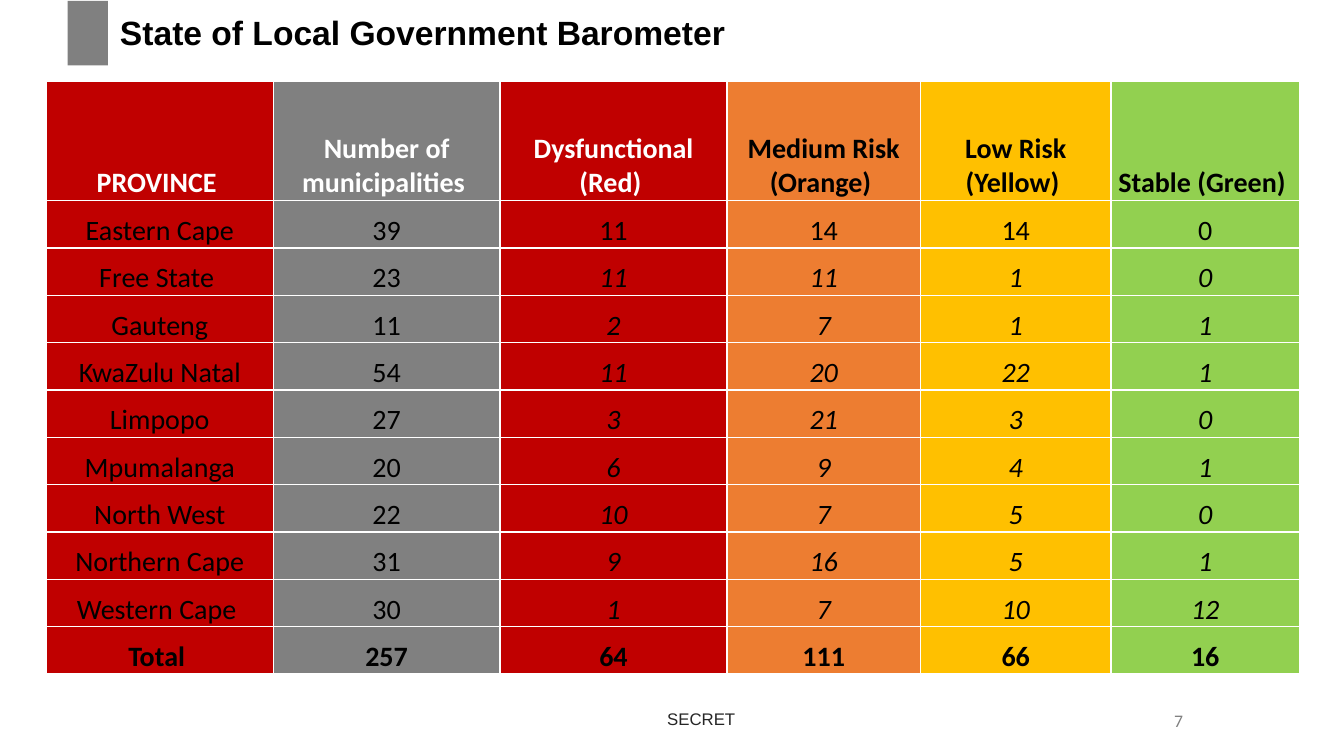
from dataclasses import dataclass
from lxml.etree import SubElement
from pptx import Presentation
from pptx.dml.color import RGBColor
from pptx.enum.shapes import MSO_SHAPE
from pptx.enum.text import MSO_ANCHOR, MSO_AUTO_SIZE, PP_ALIGN
from pptx.oxml.ns import qn
from pptx.util import Inches, Pt

TITLE = "State of Local Government Barometer"
MARK = "SECRET"
PAGE = "7"
HEADS = ["PROVINCE ", "Number of municipalities ", "Dysfunctional (Red) ",
         "Medium Risk (Orange) ", "Low Risk (Yellow) ", "Stable (Green) "]
ROWS = [
    ("Eastern Cape", 39, 11, 14, 14, 0),
    ("Free State ", 23, 11, 11, 1, 0),
    ("Gauteng", 11, 2, 7, 1, 1),
    ("KwaZulu Natal", 54, 11, 20, 22, 1),
    ("Limpopo", 27, 3, 21, 3, 0),
    ("Mpumalanga", 20, 6, 9, 4, 1),
    ("North West", 22, 10, 7, 5, 0),
    ("Northern Cape", 31, 9, 16, 5, 1),
    ("Western Cape ", 30, 1, 7, 10, 12),
    ("Total ", 257, 64, 111, 66, 16),
]
WIDTHS = [2.25, 2.25, 2.25, 1.92, 1.89, 1.87]
HEAD_H, ROW_H = 1.18, 0.47


@dataclass(frozen=True)
class Theme:
    black: str = "000000"
    white: str = "FFFFFF"
    grey: str = "808080"
    dark: str = "262626"
    fills: tuple = ("C00000", "808080", "C00000", "ED7D31", "FFC000", "92D050")
    sans: str = "Arial"
    body: str = "Calibri"
    title: float = 24
    cell: float = 20
    page: float = 12.6
    mark: float = 12


LOOK = Theme()


def paint(fill, color):
    fill.solid()
    fill.fore_color.rgb = RGBColor.from_string(color)


def write(frame, text, face, size, color, align=PP_ALIGN.CENTER, bold=False, slant=False):
    para = frame.paragraphs[0]
    para.alignment = align
    run = para.add_run()
    run.text = text
    font = run.font
    font.name, font.size = face, Pt(size)
    font.bold, font.italic = bold, slant
    font.color.rgb = RGBColor.from_string(color)
    return para


def place(shape, *box):
    shape.left, shape.top, shape.width, shape.height = map(Inches, box)


def pad(item, *sides):
    item.margin_left, item.margin_top, item.margin_right, item.margin_bottom = map(Inches, sides)


def edge(cell):
    props = cell._tc.get_or_add_tcPr()
    for side in ("a:lnL", "a:lnR", "a:lnT", "a:lnB"):
        line = SubElement(props, qn(side), w=str(Pt(1)))
        fill = SubElement(line, qn("a:solidFill"))
        SubElement(fill, qn("a:srgbClr"), val=LOOK.white)


def label(slide, box, anchor):
    frame = slide.shapes.add_textbox(*map(Inches, box)).text_frame
    frame.word_wrap = True
    frame.vertical_anchor = anchor
    pad(frame, 0.09, 0.04, 0.09, 0.04)
    return frame


def head(slide):
    bar = slide.shapes.add_shape(MSO_SHAPE.RECTANGLE, *map(Inches, (0.67, 0.01, 0.4, 0.64)))
    bar.shadow.inherit = False
    paint(bar.fill, LOOK.grey)
    bar.line.fill.background()
    title = slide.shapes.title
    place(title, 1.12, 0.17, 9.92, 0.38)
    frame = title.text_frame
    frame.word_wrap = True
    frame.auto_size = MSO_AUTO_SIZE.SHAPE_TO_FIT_TEXT
    frame.vertical_anchor = MSO_ANCHOR.TOP
    pad(frame, 0.07, 0.04, 0.07, 0.04)
    para = write(frame, TITLE, LOOK.sans, LOOK.title, LOOK.black, PP_ALIGN.LEFT, bold=True)
    para.line_spacing, para.space_before = Pt(21.9), Pt(7.3)


def grid(slide):
    lines = [HEADS, *ROWS]
    last = len(ROWS)
    box = (0.46, 0.81, sum(WIDTHS), HEAD_H + ROW_H * last)
    table = slide.shapes.add_table(len(lines), len(HEADS), *map(Inches, box)).table
    for col, width in zip(table.columns, WIDTHS):
        col.width = Inches(width)
    for r, line in enumerate(lines):
        table.rows[r].height = Inches(ROW_H if r else HEAD_H)
        for c, value in enumerate(line):
            cell = table.cell(r, c)
            edge(cell)
            paint(cell.fill, LOOK.fills[c])
            pad(cell, 0.01, 0.01, 0.01, 0)
            cell.vertical_anchor = MSO_ANCHOR.BOTTOM
            color = LOOK.white if r == 0 and c < 3 else LOOK.black
            write(cell.text_frame, str(value), LOOK.body, LOOK.cell, color,
                  bold=r in (0, last), slant=1 < r < last and c > 1)


def foot(slide):
    page = label(slide, (10.19, 6.95, 3, 0.4), MSO_ANCHOR.MIDDLE)
    write(page, PAGE, LOOK.body, LOOK.page, LOOK.grey)
    mark = label(slide, (4.71, 6.99, 4.49, 0.29), MSO_ANCHOR.TOP)
    write(mark, MARK, LOOK.sans, LOOK.mark, LOOK.dark).line_spacing = Pt(14.4)


def main():
    deck = Presentation()
    deck.slide_width, deck.slide_height = Inches(13.33), Inches(7.5)
    slide = deck.slides.add_slide(deck.slide_layouts[5])
    head(slide)
    grid(slide)
    foot(slide)
    deck.save("out.pptx")


if __name__ == "__main__":
    main()
